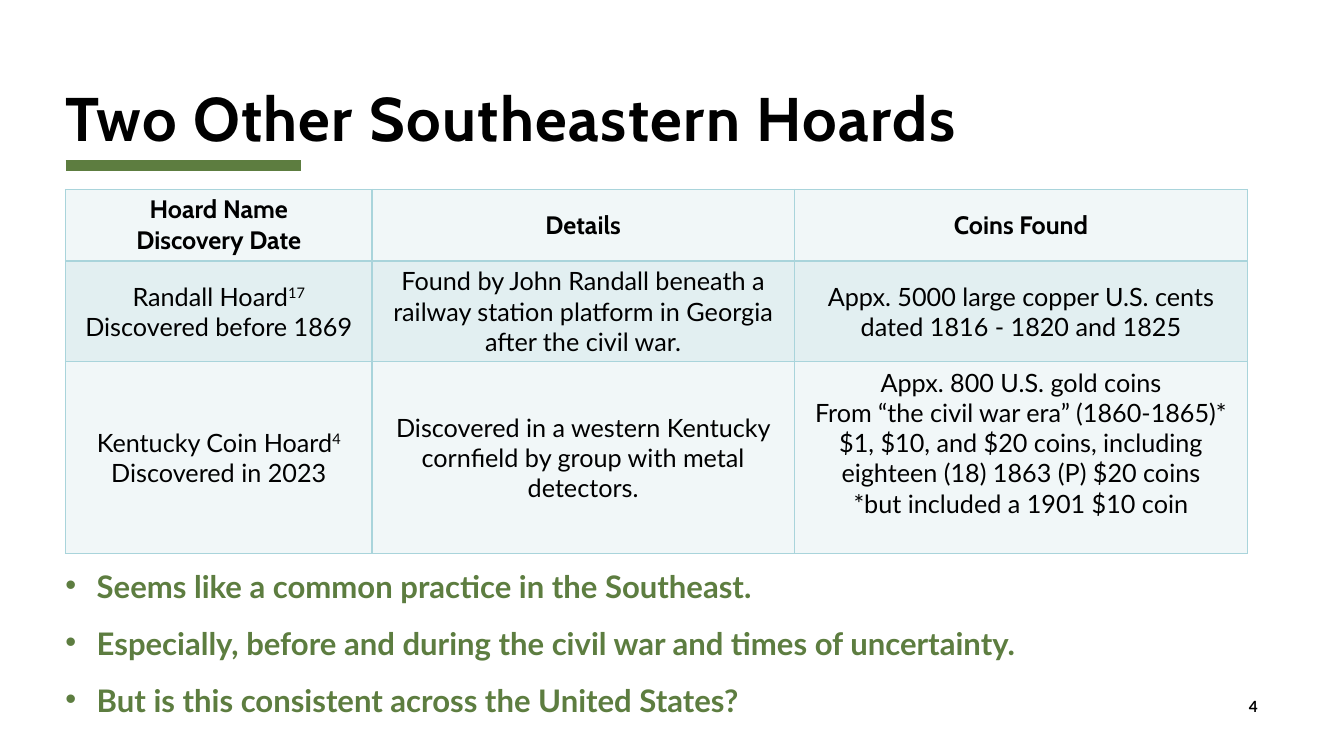
import lxml.etree
import pptx
import pptx.dml.color
import pptx.enum.shapes
import pptx.enum.text
import pptx.oxml.ns
import pptx.util

Pt = pptx.util.Pt
ALIGN = pptx.enum.text.PP_ALIGN
ANCHOR = pptx.enum.text.MSO_ANCHOR

BLACK = "000000"
GREEN = "5D7D40"
BORDER = "A9D4DB"
PALE = "F1F7F8"
TINT = "E2EFF1"

LEFT = 46.8
COLUMNS = [219, 301.5, 324]
ROWS = [51, 72, 137]
HOARDS = [
    ["Hoard Name\nDiscovery Date", "Details", "Coins Found"],
    [
        "Randall Hoard^17\nDiscovered before 1869",
        "Found by John Randall beneath a railway station platform in Georgia after the civil war.",
        "Appx. 5000 large copper U.S. cents dated 1816 - 1820 and 1825",
    ],
    [
        "Kentucky Coin Hoard^4\nDiscovered in 2023",
        "Discovered in a western Kentucky cornfield by group with metal detectors.",
        "Appx. 800 U.S. gold coins\n"
        "From “the civil war era” (1860-1865)*\n"
        "$1, $10, and $20 coins, including eighteen (18) 1863 (P) $20 coins\n"
        "*but included a 1901 $10 coin",
    ],
]
REMARKS = [
    "Seems like a common practice in the Southeast.",
    "Especially, before and during the civil war and times of uncertainty.",
    "But is this consistent across the United States?",
]


def color(value):
    return pptx.dml.color.RGBColor.from_string(value)


def add_element(parent, tag, **attributes):
    return lxml.etree.SubElement(parent, pptx.oxml.ns.qn(tag), **attributes)


def write(frame, text, size=18, font="Lato", ink=BLACK, bold=False, align=ALIGN.LEFT,
          line_spacing=None, space_before=0, tracking=0, bullet=None, indent=22.3):
    for index, line in enumerate(text.split("\n")):
        para = frame.add_paragraph() if index else frame.paragraphs[0]
        if bullet:
            properties = para._p.get_or_add_pPr()
            properties.set("marL", str(Pt(indent)))
            properties.set("indent", str(-Pt(indent)))
            add_element(properties, "a:buFont", typeface="Arial")
            add_element(properties, "a:buChar", char=bullet)
        para.alignment = align
        if line_spacing:
            para.line_spacing = line_spacing
        para.space_before = Pt(space_before if index else 0)
        for position, piece in enumerate(line.split("^")):
            span = para.add_run()
            span.text = piece
            span.font.size = Pt(size)
            span.font.name = font
            span.font.bold = bold
            span.font.color.rgb = color(ink)
            if tracking:
                span._r.get_or_add_rPr().set("spc", str(tracking * 100))
            if position:
                span._r.get_or_add_rPr().set("baseline", "30000")


class Painter:
    heading_font = "Cabin"

    def __init__(self, page):
        self.page = page

    def text(self, left, top, width, height, text, anchor=ANCHOR.TOP, inset_top=0, **style):
        box = self.page.shapes.add_textbox(Pt(left), Pt(top), Pt(width), Pt(height))
        frame = box.text_frame
        frame.word_wrap = True
        frame.vertical_anchor = anchor
        frame.margin_left = frame.margin_right = frame.margin_bottom = 0
        frame.margin_top = Pt(inset_top)
        write(frame, text, **style)

    def rule(self, left, top, width, weight, ink):
        line = self.page.shapes.add_connector(
            pptx.enum.shapes.MSO_CONNECTOR.STRAIGHT,
            Pt(left), Pt(top), Pt(left + width), Pt(top))
        line.line.color.rgb = color(ink)
        line.line.width = Pt(weight)
        add_element(line._element.spPr, "a:effectLst")

    def border(self, cell, ink, weight):
        properties = cell._tc.get_or_add_tcPr()
        for side in ("a:lnL", "a:lnR", "a:lnT", "a:lnB"):
            edge = add_element(properties, side, w=str(Pt(weight)))
            add_element(add_element(edge, "a:solidFill"), "a:srgbClr", val=ink)

    def table(self, left, top, columns, rows, texts):
        table = self.page.shapes.add_table(
            len(rows), len(columns), Pt(left), Pt(top), Pt(sum(columns)), Pt(sum(rows))).table
        for column, width in zip(table.columns, columns):
            column.width = Pt(width)
        for index, (row, height) in enumerate(zip(table.rows, rows)):
            row.height = Pt(height)
            heading = index == 0
            for cell, text in zip(row.cells, texts[index]):
                self.border(cell, BORDER, 1)
                cell.fill.solid()
                cell.fill.fore_color.rgb = color(TINT if index % 2 else PALE)
                cell.vertical_anchor = ANCHOR.MIDDLE
                write(cell.text_frame, text, bold=heading, align=ALIGN.CENTER,
                      font=self.heading_font if heading else "Lato")
        return table


def main():
    deck = pptx.Presentation()
    deck.slide_width = Pt(960)
    deck.slide_height = Pt(540)
    painter = Painter(deck.slides.add_slide(deck.slide_layouts[6]))

    painter.rule(LEFT, 118, 168, 8, GREEN)
    painter.text(LEFT, 46, 864, 63.4, "Two Other Southeastern Hoards", anchor=ANCHOR.BOTTOM,
                 size=44, font=painter.heading_font, bold=True, line_spacing=0.8, tracking=1)
    table = painter.table(LEFT, 135.4, COLUMNS, ROWS, HOARDS)
    table.cell(2, 2).margin_bottom = Pt(25)
    painter.text(LEFT, 394.6, 844, 121, "\n".join(REMARKS), inset_top=18, size=22.2,
                 ink=GREEN, bold=True, line_spacing=0.7, space_before=22, bullet="•")
    painter.text(892, 498.2, 41, 19.4, "4", size=11, bold=True)

    deck.save("out.pptx")


if __name__ == "__main__":
    main()
